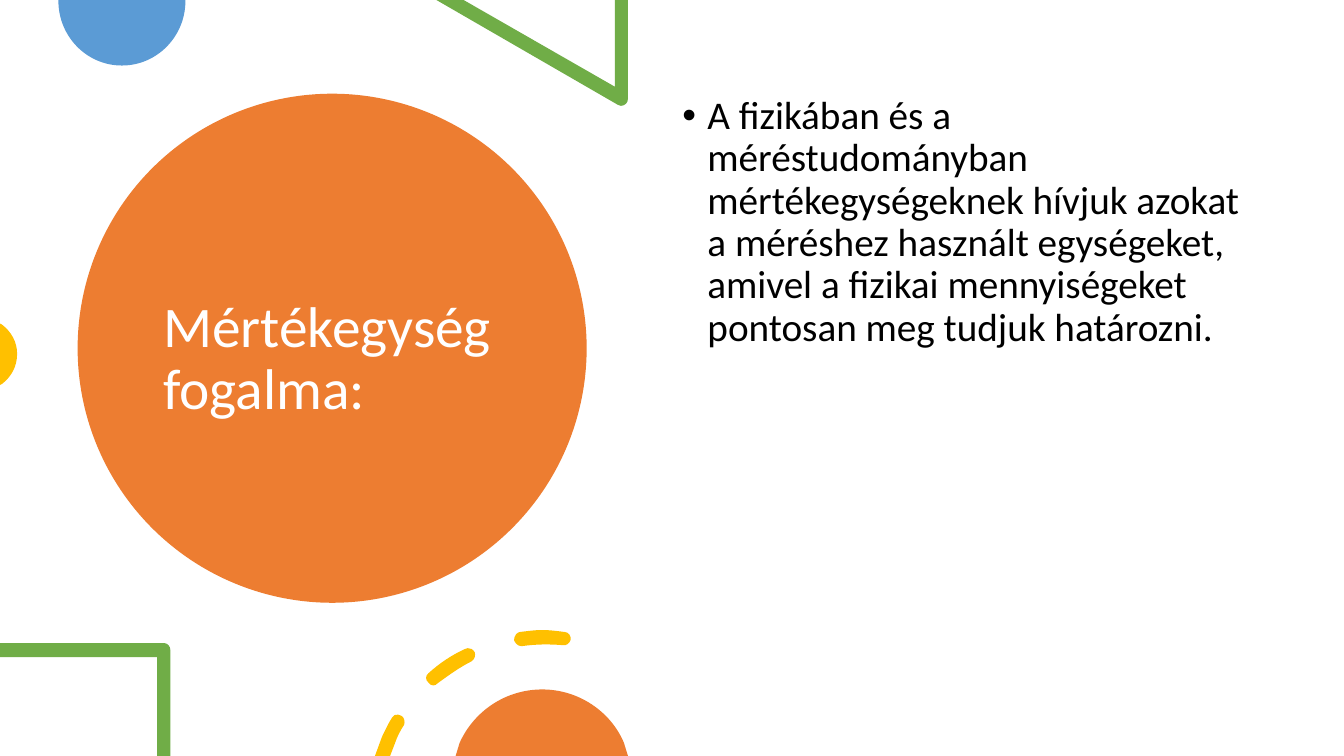
from lxml import etree
from pptx import Presentation
from pptx.dml.color import RGBColor
from pptx.enum.shapes import MSO_SHAPE
from pptx.enum.text import MSO_ANCHOR
from pptx.oxml.ns import qn
from pptx.util import Pt

PX = 9144
SLIDE_HEIGHT = 750 * PX
FONT = "Calibri"
COLORS = {
    "orange": "ED7D31",
    "blue": "5B9BD5",
    "green": "70AD47",
    "gold": "FFC000",
    "white": "FFFFFF",
    "black": "000000",
}

BLUE_DISC = [
    [(184, 0), (58, 0), (58, 1), (58, 36, 86, 65, 121, 65), (156, 65, 184, 36, 184, 1)],
]
GREEN_TRIANGLE = [
    [(623, 0), (610, 0), (610, 86), (460, 0), (433, 0), (613, 104),
     (614, 105, 615, 105, 616, 105), (620, 105, 623, 102, 623, 98)],
]
GOLD_DISC = [
    [(0, 321), (0, 382), (2, 381), (11, 374, 17, 364, 17, 351), (17, 339, 11, 329, 2, 322)],
]
GREEN_SQUARE = [
    [(163, 638), (0, 638), (0, 652), (156, 652), (156, 750), (169, 750), (169, 645),
     (169, 641, 166, 638, 163, 638)],
]
GOLD_DASHES = [
    [(395, 709), (393, 708, 390, 710, 389, 712), (385, 718, 382, 725, 379, 731),
     (372, 750), (387, 750), (392, 737), (394, 731, 397, 725, 401, 719),
     (402, 716, 401, 711, 398, 710), (397, 709, 396, 709, 395, 709)],
    [(464, 643), (463, 643, 462, 643, 461, 644), (448, 650, 436, 658, 425, 668),
     (422, 670, 422, 675, 425, 677), (426, 679, 428, 680, 430, 680), (430, 680),
     (432, 680, 433, 679, 434, 678), (445, 670, 456, 662, 468, 656),
     (471, 654, 472, 650, 471, 647), (469, 644, 467, 643, 464, 643)],
    [(538, 625), (531, 625, 524, 626, 516, 627), (513, 627, 510, 631, 510, 635),
     (511, 638, 514, 641, 517, 641), (518, 641, 518, 641, 518, 641),
     (532, 639, 545, 639, 558, 640), (562, 641, 565, 638, 566, 635),
     (567, 631, 564, 627, 560, 627), (560, 627, 560, 627, 560, 627),
     (553, 626, 545, 625, 538, 625)],
]
ORANGE_DISC = [
    [(538, 684), (501, 684, 470, 706, 456, 737), (452, 750), (623, 750), (619, 737),
     (606, 706, 574, 684, 538, 684)],
]


def rgb(color):
    return RGBColor.from_string(COLORS[color])


def paint(figure, color):
    figure.fill.solid()
    figure.fill.fore_color.rgb = rgb(color)
    figure.line.fill.background()
    figure.shadow.inherit = False


def add_circle(slide, left, top, diameter, color):
    circle = slide.shapes.add_shape(
        MSO_SHAPE.OVAL, left * PX, top * PX, diameter * PX, diameter * PX)
    paint(circle, color)


def bend(outline, segments):
    lines = list(outline._element.iter(qn("a:lnTo")))
    for line, segment in zip(lines, segments):
        if len(segment) == 2:
            continue
        curve = etree.Element(qn("a:cubicBezTo"))
        for x, y in zip(segment[::2], segment[1::2]):
            point = etree.SubElement(curve, qn("a:pt"))
            point.set("x", str(x * PX - outline.left))
            point.set("y", str(y * PX - outline.top))
        line.getparent().replace(line, curve)


def add_outline(slide, contours, color):
    x, y = contours[0][0]
    builder = slide.shapes.build_freeform(x, y, scale=PX)
    for index, (start, *segments) in enumerate(contours):
        if index:
            builder.move_to(*start)
        builder.add_line_segments([segment[-2:] for segment in segments], close=True)
    outline = builder.convert_to_shape()
    path = next(outline._element.iter(qn("a:path")))
    path.set("w", str(outline.width))
    path.set("h", str(outline.height))
    for point in path.iter(qn("a:pt")):
        for axis in ("x", "y"):
            point.set(axis, str(int(point.get(axis)) * PX))
    bend(outline, [segment for contour in contours for segment in contour[1:]])
    paint(outline, color)


def add_text(slide, left, top, width, height, words, size, color, anchor):
    box = slide.shapes.add_textbox(left * PX, top * PX, width * PX, height * PX)
    frame = box.text_frame
    frame.word_wrap = True
    frame.vertical_anchor = anchor
    paragraph = frame.paragraphs[0]
    paragraph.line_spacing = 0.9
    run = paragraph.add_run()
    run.text = words
    run.font.name = FONT
    run.font.size = Pt(size)
    run.font.color.rgb = rgb(color)
    return paragraph


def add_bullet(paragraph, indent):
    paragraph.space_before = Pt(10)
    properties = paragraph._p.get_or_add_pPr()
    properties.set("marL", str(indent * PX))
    properties.set("indent", str(-indent * PX))
    etree.SubElement(properties, qn("a:buFont")).set("typeface", "Arial")
    etree.SubElement(properties, qn("a:buChar")).set("char", "•")


def main():
    presentation = Presentation()
    presentation.slide_width = SLIDE_HEIGHT * 16 // 9
    presentation.slide_height = SLIDE_HEIGHT
    slide = presentation.slides.add_slide(presentation.slide_layouts[6])

    add_circle(slide, 77, 93, 505, "orange")
    add_text(slide, 152, 135, 354, 445, "Mértékegység fogalma:",
             41, "white", MSO_ANCHOR.MIDDLE)
    add_outline(slide, BLUE_DISC, "blue")
    add_outline(slide, GREEN_TRIANGLE, "green")
    add_outline(slide, GOLD_DISC, "gold")
    definition = add_text(
        slide, 667, 90, 575, 535,
        "A fizikában és a méréstudományban mértékegységeknek hívjuk azokat a méréshez "
        "használt egységeket, amivel a fizikai mennyiségeket pontosan meg tudjuk határozni.",
        28, "black", MSO_ANCHOR.TOP)
    add_bullet(definition, 25)
    add_outline(slide, GREEN_SQUARE, "green")
    add_outline(slide, GOLD_DASHES, "gold")
    add_outline(slide, ORANGE_DISC, "orange")

    presentation.save("out.pptx")


if __name__ == "__main__":
    main()
